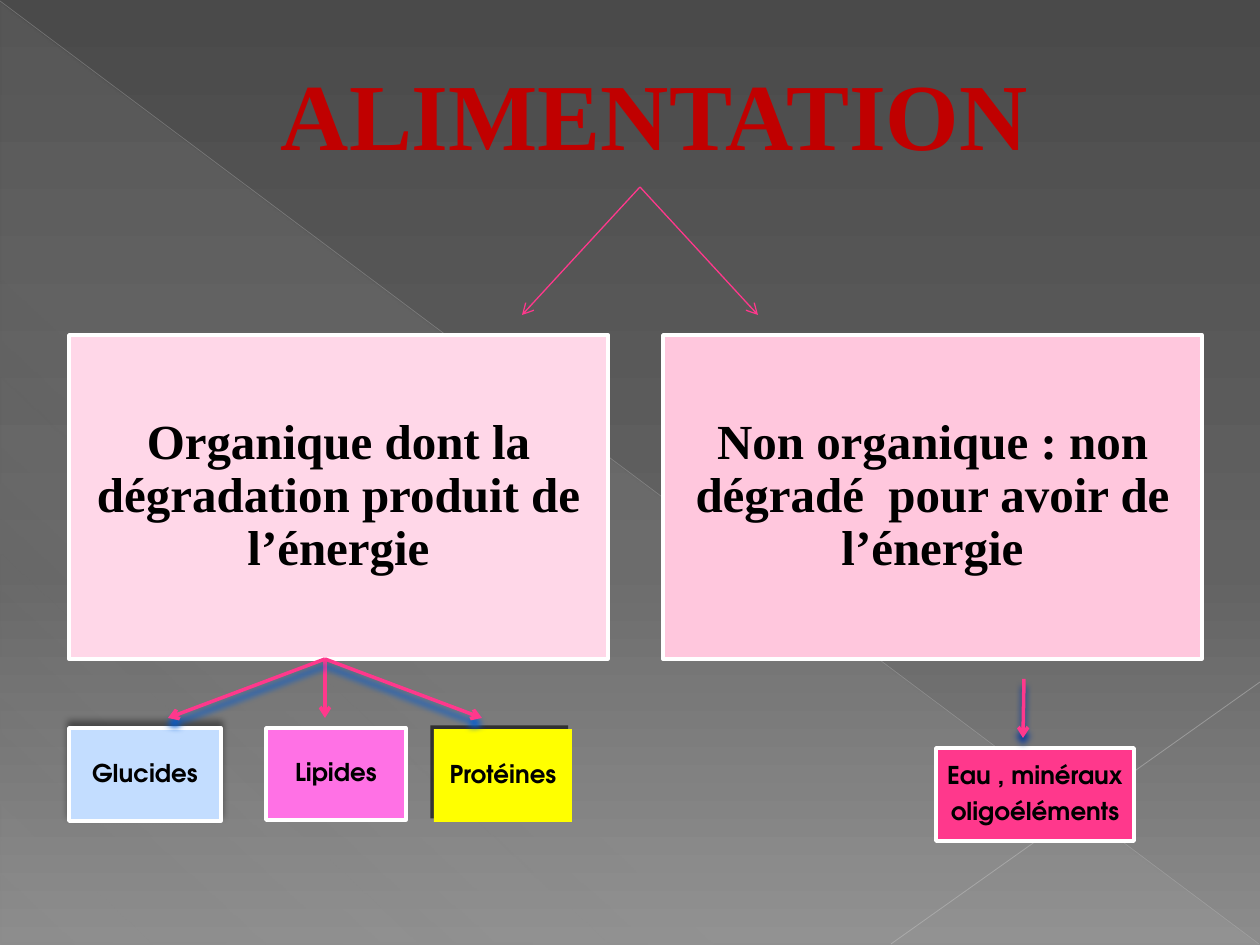
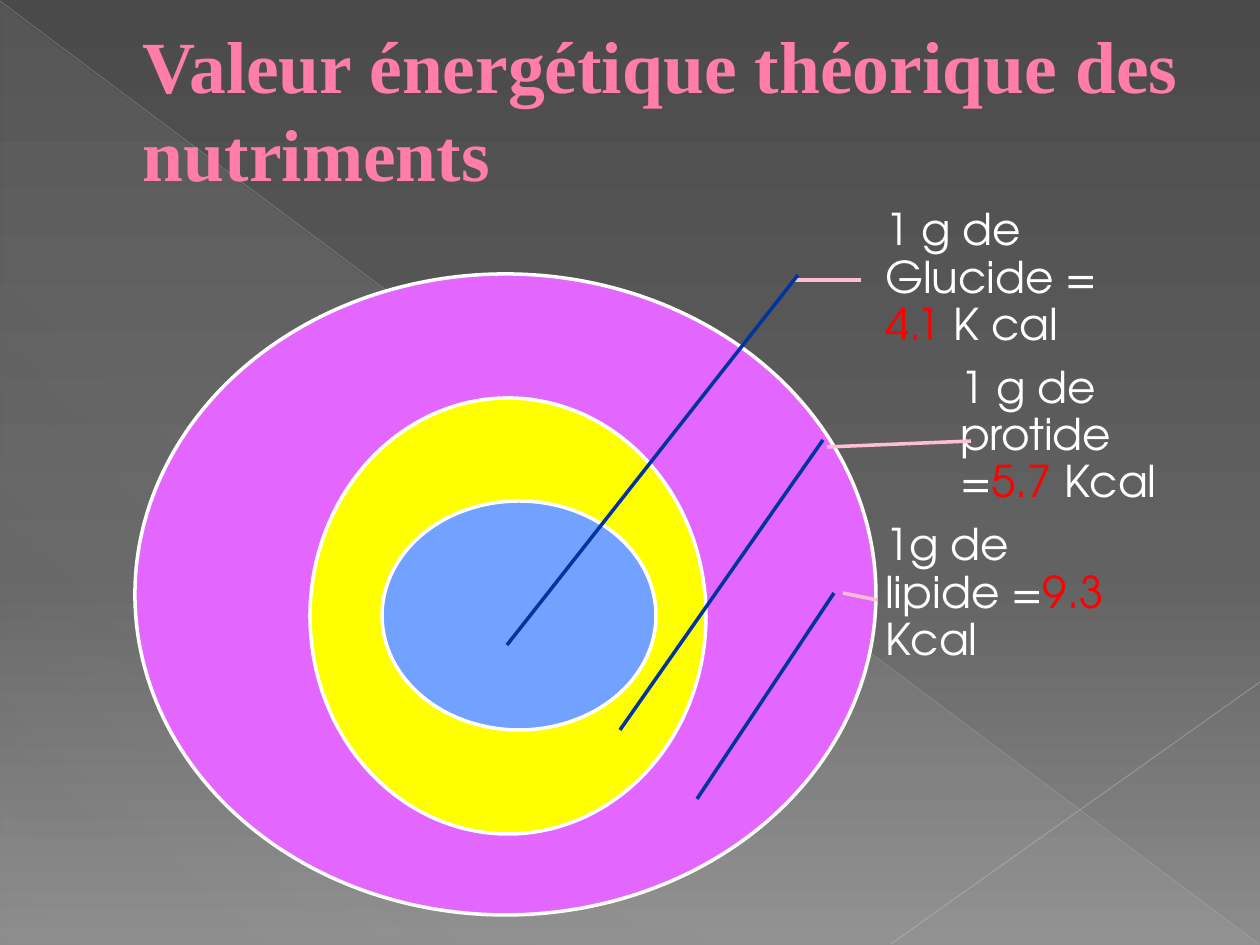
from lxml.etree import SubElement
from pptx import Presentation
from pptx.dml.color import RGBColor
from pptx.enum.shapes import MSO_CONNECTOR, MSO_SHAPE
from pptx.enum.text import MSO_ANCHOR, PP_ALIGN
from pptx.oxml.ns import qn
from pptx.util import Pt

EMU_PER_PX = 914400 / 126
SERIF = "Times New Roman"
SANS = "TeX Gyre Adventor"
COLORS = {
    "white": "FFFFFF",
    "black": "000000",
    "night": "4A4A4A",
    "slate": "626262",
    "ash": "8C8C8C",
    "veil": "D2D2D2",
    "diagonal": "BFBFBF",
    "corner": "C6C6C6",
    "title_red": "C00000",
    "title_red_edge": "4D005E",
    "title_pink": "FF7DA7",
    "title_pink_edge": "B12761",
    "organic": "FFD7E8",
    "inorganic": "FFC7DD",
    "sky": "C3DDFF",
    "orchid": "FF71E5",
    "yellow": "FFFF00",
    "pink": "FF388C",
    "navy": "00349E",
    "blue": "005BD3",
    "violet": "E366FF",
    "core": "72A1FF",
    "leader": "FFBFD0",
    "red": "FF0000",
}


def px(length):
    return round(length * EMU_PER_PX)


def color(name):
    return RGBColor.from_string(COLORS[name])


def add_color(parent, name, opacity=100):
    node = SubElement(parent, qn("a:srgbClr"), val=COLORS[name])
    if opacity < 100:
        SubElement(node, qn("a:alpha"), val=str(opacity * 1000))


def set_gradient(fill, element, stops, angle):
    fill.gradient()
    gradient = element.find(".//" + qn("a:gradFill"))
    gradient.clear()
    stop_list = SubElement(gradient, qn("a:gsLst"))
    for position, name, opacity in stops:
        stop = SubElement(stop_list, qn("a:gs"), pos=str(position * 1000))
        add_color(stop, name, opacity)
    SubElement(gradient, qn("a:lin"), ang=str(angle * 60000), scaled="0")


def add_shadow(effects, name, opacity, blur, distance, direction):
    shadow = SubElement(
        effects, qn("a:outerShdw"), blurRad=str(int(Pt(blur))),
        dist=str(int(Pt(distance))), dir=str(direction * 60000),
        algn="ctr", rotWithShape="0")
    add_color(shadow, name, opacity)


def add_shape(slide, kind, box, fill, line="white", shadow=None):
    shape = slide.shapes.add_shape(kind, *map(px, box))
    shape.shadow.inherit = False
    shape.fill.solid()
    shape.fill.fore_color.rgb = color(fill)
    if line:
        shape.line.color.rgb = color(line)
        shape.line.width = Pt(2)
    else:
        shape.line.fill.background()
    if shadow:
        add_shadow(shape.element.spPr.find(qn("a:effectLst")), *shadow)
    return shape


def add_line(slide, start, end, name, width=2, opacity=100, arrow=False, shadow=None):
    connector = slide.shapes.add_connector(
        MSO_CONNECTOR.STRAIGHT, *map(px, start + end))
    connector.line.color.rgb = color(name)
    connector.line.width = Pt(width)
    properties = connector.element.spPr
    if opacity < 100:
        SubElement(properties.find(".//" + qn("a:srgbClr")), qn("a:alpha"),
                   val=str(opacity * 1000))
    if arrow:
        SubElement(properties.find(qn("a:ln")), qn("a:tailEnd"), type="arrow")
    effects = SubElement(properties, qn("a:effectLst"))
    if shadow:
        add_shadow(effects, *shadow)


def write_text(shape, paragraphs, size, font=SANS, bold=False, align=PP_ALIGN.CENTER,
               insets=(13, 6, 13, 6), spacing=None, gap=0):
    frame = shape.text_frame
    frame.word_wrap = True
    frame.vertical_anchor = MSO_ANCHOR.MIDDLE
    (frame.margin_left, frame.margin_top,
     frame.margin_right, frame.margin_bottom) = map(px, insets)
    for index, runs in enumerate(paragraphs):
        paragraph = frame.add_paragraph() if index else frame.paragraphs[0]
        paragraph.alignment = align
        if spacing:
            paragraph.line_spacing = spacing
        if index:
            paragraph.space_before = Pt(gap)
        for text, name in runs:
            run = paragraph.add_run()
            run.text = text
            run.font.size = Pt(size)
            run.font.name = font
            run.font.bold = bold
            run.font.color.rgb = color(name)


def add_title(slide, box, text, name, outline, **text_format):
    title = slide.shapes.add_textbox(*map(px, box))
    write_text(title, [[(text, name)]], font=SERIF, bold=True, **text_format)
    for properties in title.element.iter(qn("a:rPr")):
        line = SubElement(properties, qn("a:ln"), w=str(int(Pt(outline))))
        add_color(SubElement(line, qn("a:solidFill")), name + "_edge")
        properties.insert(0, line)


def add_label_box(slide, box, lines, fill, size=14, font=SANS, inset=8, **shape_format):
    shape = add_shape(slide, MSO_SHAPE.RECTANGLE, box, fill, **shape_format)
    write_text(shape, [[(line, "black")] for line in lines], size, font=font, bold=True,
               insets=(inset,) * 4, spacing=0.9, gap=5)


def add_callout(slide, box, runs, leader, pointer):
    label = slide.shapes.add_textbox(*map(px, box))
    write_text(label, [runs], 25, align=PP_ALIGN.LEFT, insets=(24, 4, 4, 4), spacing=0.9)
    add_line(slide, *leader, "leader")
    add_line(slide, *pointer, "navy")


def add_themed_slide(presentation):
    slide = presentation.slides.add_slide(presentation.slide_layouts[6])
    set_gradient(slide.background.fill, slide.element,
                 [(0, "night", 100), (60, "slate", 100), (100, "ash", 100)], 90)
    triangle = add_shape(slide, MSO_SHAPE.RIGHT_TRIANGLE, (1, 3, 1258, 942),
                         "veil", line=None)
    set_gradient(triangle.fill, triangle.element,
                 [(0, "veil", 10), (70, "veil", 8), (100, "veil", 1)], 133)
    add_line(slide, (0, 1), (1259, 944), "diagonal", width=0.39, opacity=35)
    add_line(slide, (1260, 682), (891, 944), "corner", width=0.47, opacity=45)
    return slide


def build_food_slide(presentation):
    slide = add_themed_slide(presentation)
    families = [
        (69, "Organique dont la dégradation produit de l’énergie", "organic"),
        (663, "Non organique : non dégradé  pour avoir de l’énergie", "inorganic"),
    ]
    for left, text, fill in families:
        add_label_box(slide, (left, 335, 539, 324), [text], fill,
                      size=28, font=SERIF, inset=15)
    add_label_box(slide, (69, 728, 152, 93), ["Glucides"], "sky",
                  shadow=("black", 40, 4, 3, 270))
    add_label_box(slide, (266, 728, 140, 92), ["Lipides"], "orchid")
    add_label_box(slide, (434, 729, 138, 93), ["Protéines"], "yellow", line=None,
                  shadow=("black", 60, 0, 3, 225))
    add_label_box(slide, (936, 748, 198, 93), ["Eau , minéraux", "oligoéléments"], "pink")

    for tip in (758, 522):
        add_line(slide, (640, 187), (tip, 315), "pink", width=0.75, arrow=True)
    add_line(slide, (1024, 679), (1023, 738), "pink", arrow=True,
             shadow=("navy", 100, 4, 4, 90))
    glow = ("blue", 100, 4, 4, 90)
    for tip, shadow in ((482, glow), (325, None), (168, glow)):
        add_line(slide, (325, 659), (tip, 718), "pink", arrow=True, shadow=shadow)
    add_title(slide, (49, 49, 1211, 127), "ALIMENTATION", "title_red", 0.71, size=54)


def build_energy_slide(presentation):
    slide = add_themed_slide(presentation)
    add_title(slide, (63, 0, 1134, 217), "Valeur énergétique théorique des nutriments",
              "title_pink", 0.5, size=42, align=PP_ALIGN.LEFT, insets=(80, 6, 13, 6))
    rings = [
        ((135, 274, 741, 641), "violet"),
        ((310, 398, 396, 436), "yellow"),
        ((382, 501, 274, 229), "core"),
    ]
    for box, fill in rings:
        add_shape(slide, MSO_SHAPE.OVAL, box, fill)
    callouts = [
        ((861, 200, 270, 158), ("1 g de Glucide = ", "4.1", " K cal"),
         ((793, 280), (861, 280)), ((798, 275), (507, 645))),
        ((936, 357, 261, 158), ("1 g de protide =", "5.7", " Kcal"),
         ((827, 447), (971, 441)), ((823, 440), (620, 730))),
        ((861, 515, 270, 158), ("1g de lipide =", "9.3 ", "Kcal"),
         ((843, 593), (877, 600)), ((834, 593), (697, 799))),
    ]
    for box, texts, leader, pointer in callouts:
        runs = list(zip(texts, ("white", "red", "white")))
        add_callout(slide, box, runs, leader, pointer)


def main():
    presentation = Presentation()
    presentation.slide_width = px(1260)
    presentation.slide_height = px(945)
    build_food_slide(presentation)
    build_energy_slide(presentation)
    presentation.save("out.pptx")


if __name__ == "__main__":
    main()
